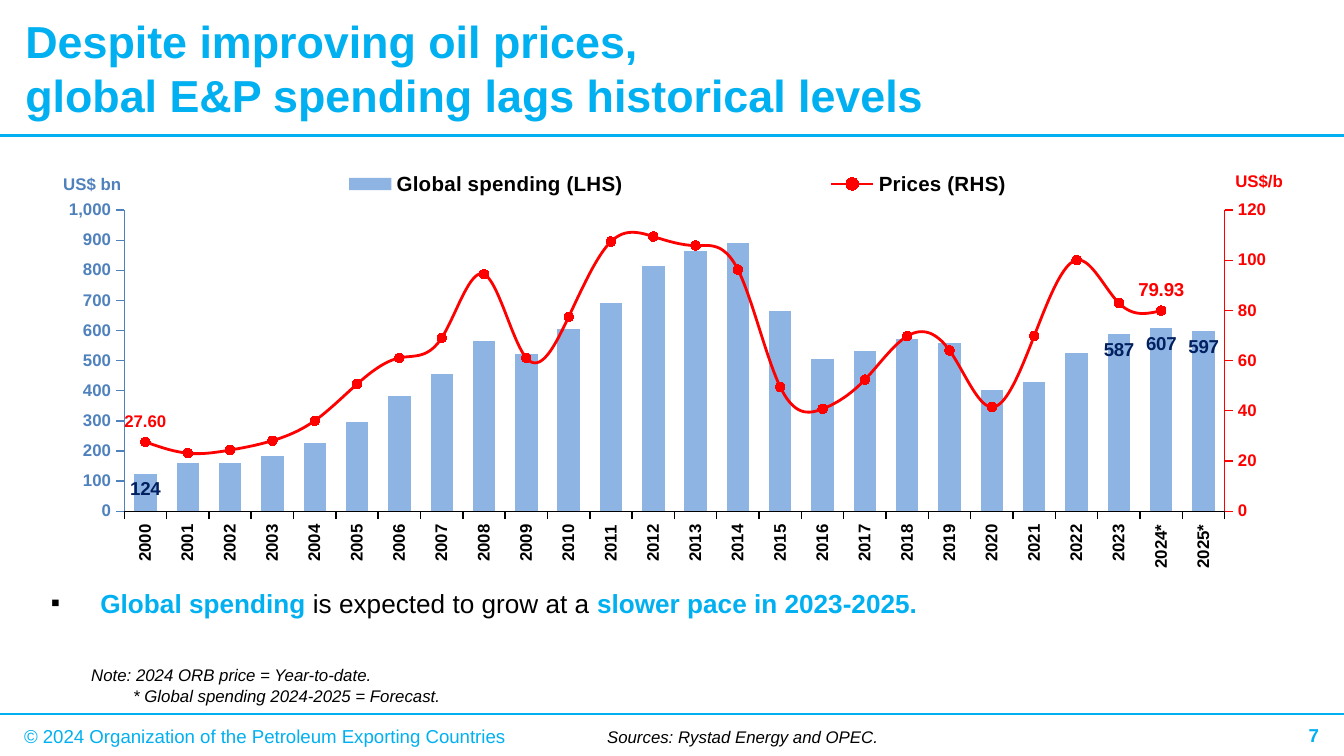
from copy import deepcopy

from lxml import etree
from pptx import Presentation
from pptx import util as u
from pptx.chart import axis as axes
from pptx.chart import data
from pptx.dml.color import RGBColor
from pptx.enum import chart as ch, shapes, text
from pptx.oxml.ns import qn

Pt = u.Pt
FONT = "Arial"
COLORS = {"sky": "00B0F0", "black": "000000", "steel": "4F81BD",
          "bar": "8EB4E3", "red": "FF0000", "navy": "002060"}

YEARS = [str(year) for year in range(2000, 2024)] + ["2024*", "2025*"]
SPENDING = [124, 161, 161, 184, 225, 296, 384, 457, 565, 521, 606, 691, 813,
            863, 889, 664, 504, 531, 571, 558, 401, 429, 525, 587, 607, 597]
PRICES = [27.60, 23.12, 24.36, 28.10, 36.05, 50.64, 61.08, 69.08, 94.45,
          61.06, 77.45, 107.46, 109.45, 105.87, 96.29, 49.49, 40.76, 52.43,
          69.78, 64.04, 41.47, 69.89, 100.08, 82.95, 79.93, None]
SPENDING_LABELS = {0: 10, 23: 10, 24: 10, 25: 10}
PRICE_LABELS = {0: 9, 24: 10}

SKY_BOLD = {"color": "sky", "bold": True}
TITLE = [[("Despite improving oil prices,", SKY_BOLD), None,
          ("global E&P spending lags historical levels", SKY_BOLD)]]
MESSAGE = [[("Global spending", SKY_BOLD),
            (" is expected to grow at a ", {}),
            ("slower pace in 2023-2025.", SKY_BOLD)]]
NOTE = [[("Note: 2024 ORB price = Year-to-date.", {"italic": True})],
        [("* Global spending 2024-2025 = Forecast.", {"italic": True})]]
SOURCES = [[("Sources: Rystad Energy and OPEC.", {"italic": True})]]
COPYRIGHT = [[("© 2024 Organization of the Petroleum Exporting Countries",
               {"color": "sky"})]]
PAGE = [[("7", SKY_BOLD)]]


def rgb(name):
    return RGBColor.from_string(COLORS[name])


def style(font, size, color="black", bold=False, italic=False):
    font.name, font.size = FONT, Pt(size)
    font.bold, font.italic = bold, italic
    font.color.rgb = rgb(color)


def add_text(slide, box, paragraphs, size, middle=False):
    frame = slide.shapes.add_textbox(*map(Pt, box)).text_frame
    frame.word_wrap = True
    if middle:
        frame.vertical_anchor = text.MSO_ANCHOR.MIDDLE
    for index, runs in enumerate(paragraphs):
        paragraph = frame.paragraphs[0] if index == 0 else frame.add_paragraph()
        for part in runs:
            if part is None:
                paragraph.add_line_break()
                continue
            run = paragraph.add_run()
            run.text = part[0]
            style(run.font, size, **part[1])
    return frame.paragraphs


def add_rule(slide, y):
    rule = slide.shapes.add_connector(shapes.MSO_CONNECTOR.STRAIGHT,
                                      0, Pt(y), Pt(720), Pt(y))
    rule.line.color.rgb = rgb("sky")
    rule.line.width = Pt(1.5)
    etree.SubElement(rule._element.spPr, qn("a:effectLst"))


def child(parent, tag, value):
    node = etree.SubElement(parent, qn(tag))
    node.set("val", str(value))
    return node


def set_layout(parent, index, **places):
    for old in parent.findall(qn("c:layout")):
        parent.remove(old)
    layout = etree.Element(qn("c:layout"))
    manual = etree.SubElement(layout, qn("c:manualLayout"))
    if "w" in places:
        child(manual, "c:layoutTarget", "inner")
    for name in ("x", "y"):
        child(manual, f"c:{name}Mode", "edge")
    for name, value in places.items():
        child(manual, f"c:{name}", value)
    parent.insert(index, layout)


def style_axis(axis, color):
    axis.has_major_gridlines = False
    axis.major_tick_mark = ch.XL_TICK_MARK.OUTSIDE
    axis.minor_tick_mark = ch.XL_TICK_MARK.NONE
    axis.format.line.color.rgb = rgb(color)
    axis.format.line.width = Pt(0.75)
    style(axis.tick_labels.font, 9, color, bold=True)


def style_value_axis(axis, color, title, top, step, number_format, x, y):
    style_axis(axis, color)
    axis.minimum_scale, axis.maximum_scale, axis.major_unit = 0, top, step
    axis.tick_labels.number_format = number_format
    axis.tick_labels.number_format_is_linked = False
    axis.has_title = True
    run = axis.axis_title.text_frame.paragraphs[0].add_run()
    run.text = title
    style(run.font, 9, color, bold=True)
    element = axis.axis_title._element
    body = next(element.iter(qn("a:bodyPr")))
    body.set("rot", "0")
    body.set("vert", "horz")
    set_layout(element, 1, x=x, y=y)


def label_points(series, sizes, color, position):
    for index, size in sizes.items():
        label = series.points[index].data_label
        style(label.font, size, color, bold=True)
        label.position = position
    series.data_labels.show_value = False


def move_to_right_axis(chart):
    plot_area = chart._chartSpace.chart.plotArea
    bars = plot_area.find(qn("c:barChart"))
    prices = bars.findall(qn("c:ser"))[1]
    for flag in prices.findall(qn("c:invertIfNegative")):
        prices.remove(flag)
    lines = etree.Element(qn("c:lineChart"))
    child(lines, "c:grouping", "standard")
    child(lines, "c:varyColors", 0)
    lines.append(prices)
    child(lines, "c:marker", 1)
    category_id, value_id = 5001, 5002
    child(lines, "c:axId", category_id)
    child(lines, "c:axId", value_id)
    bars.addnext(lines)

    left = plot_area.find(qn("c:valAx"))
    right = deepcopy(left)
    hidden = deepcopy(plot_area.find(qn("c:catAx")))
    for axis, own, other in ((right, value_id, category_id),
                             (hidden, category_id, value_id)):
        axis.find(qn("c:axId")).set("val", str(own))
        axis.find(qn("c:crossAx")).set("val", str(other))
    right.find(qn("c:axPos")).set("val", "r")
    right.find(qn("c:crosses")).set("val", "max")
    left.addnext(right)
    right.addnext(hidden)
    axes.CategoryAxis(hidden).visible = False
    return axes.ValueAxis(left), axes.ValueAxis(right)


def add_spending_chart(slide):
    table = data.CategoryChartData()
    table.categories = YEARS
    table.add_series("Global spending (LHS)", SPENDING, number_format="0")
    table.add_series("Prices (RHS)", PRICES, number_format="0.00")
    chart = slide.shapes.add_chart(ch.XL_CHART_TYPE.COLUMN_CLUSTERED, Pt(30.24),
                                   Pt(76.3), Pt(660.24), Pt(228.24), table).chart
    style(chart.font, 9)
    chart.has_title = False
    left, right = move_to_right_axis(chart)
    style_axis(chart.category_axis, "black")
    label_body = chart.category_axis._element.find(qn("c:txPr")).find(qn("a:bodyPr"))
    label_body.set("rot", "-5400000")
    label_body.set("vert", "horz")
    style_value_axis(left, "steel", "US$ bn", 1000, 100, "#,##0", 0.003, 0.065)
    style_value_axis(right, "red", "US$/b", 120, 20, "0", 0.954, 0.057)
    set_layout(chart._chartSpace.chart.plotArea, 0, x=0.055, y=0.159, w=0.893, h=0.707)

    chart.has_legend = True
    chart.legend.position = ch.XL_LEGEND_POSITION.TOP
    chart.legend.include_in_layout = False
    style(chart.legend.font, 11, bold=True)
    set_layout(chart.legend._element, 1, x=0.074, y=0.055, w=0.86, h=0.085)

    bars, lines = chart.plots
    bars.gap_width = 89
    bars.vary_by_categories = False
    spending, prices = bars.series[0], lines.series[0]
    spending.format.fill.solid()
    spending.format.fill.fore_color.rgb = rgb("bar")
    prices.smooth = True
    prices.format.line.color.rgb = rgb("red")
    prices.format.line.width = Pt(1.5)
    prices.marker.style, prices.marker.size = ch.XL_MARKER_STYLE.CIRCLE, 5
    prices.marker.format.fill.solid()
    prices.marker.format.fill.fore_color.rgb = rgb("red")
    prices.marker.format.line.color.rgb = rgb("red")
    label_points(spending, SPENDING_LABELS, "navy", ch.XL_LABEL_POSITION.INSIDE_END)
    label_points(prices, PRICE_LABELS, "red", ch.XL_LABEL_POSITION.ABOVE)


def add_bullet(paragraph, indent):
    properties = paragraph._p.get_or_add_pPr()
    properties.set("marL", str(Pt(indent)))
    properties.set("indent", str(-Pt(indent)))
    color = etree.SubElement(properties, qn("a:buClr"))
    child(color, "a:srgbClr", COLORS["black"])
    etree.SubElement(properties, qn("a:buFont")).set("typeface", FONT)
    etree.SubElement(properties, qn("a:buChar")).set("char", "▪")


def main():
    deck = Presentation()
    deck.slide_width, deck.slide_height = Pt(720), Pt(405)
    slide = deck.slides.add_slide(deck.slide_layouts[6])
    for y in (382.5, 72.5):
        add_rule(slide, y)
    page = add_text(slide, (653.8, 383, 59.8, 21.6), PAGE, 10, middle=True)
    page[0].alignment = text.PP_ALIGN.RIGHT
    add_text(slide, (6.5, 0, 617.8, 72.7), TITLE, 24, middle=True)
    add_text(slide, (318.2, 386, 372.2, 18), SOURCES, 9)
    add_text(slide, (5.8, 383.8, 462.2, 21.6), COPYRIGHT, 10, middle=True)
    message = add_text(slide, (20.2, 311, 679, 24.5), MESSAGE, 14)
    add_bullet(message[0], 26.5)
    note = add_text(slide, (41.8, 352.8, 372.2, 28.8), NOTE, 9)
    note[1]._p.get_or_add_pPr().set("marL", str(Pt(22.5)))
    add_spending_chart(slide)
    deck.save("out.pptx")


if __name__ == "__main__":
    main()
